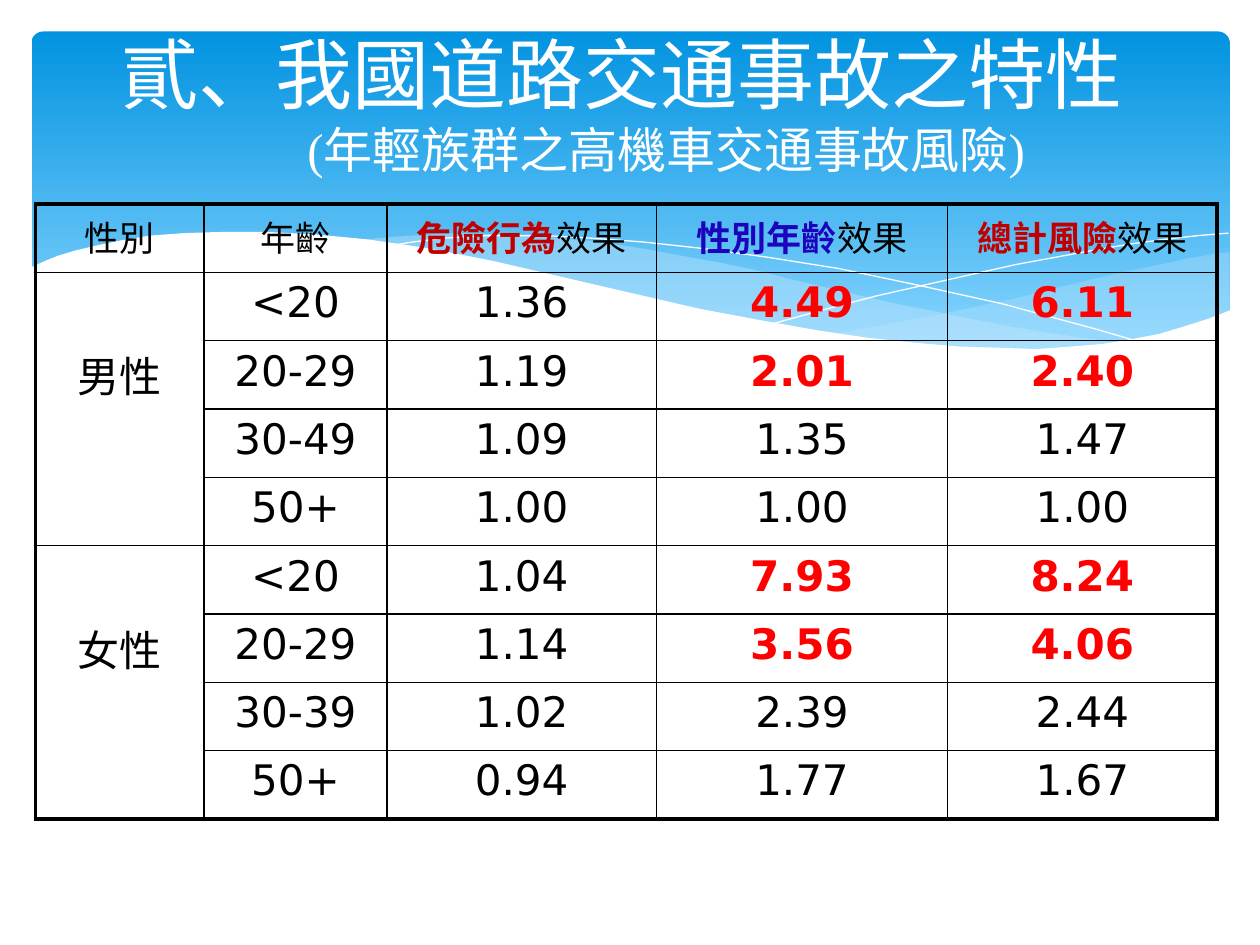
"""Build the slide on young riders' motorcycle accident risk."""
from lxml import etree
from pptx import Presentation
from pptx.dml.color import RGBColor
from pptx.enum.shapes import MSO_SHAPE as SHAPE
from pptx.enum.text import MSO_ANCHOR as ANCHOR, PP_ALIGN as ALIGN
from pptx.oxml.ns import qn
from pptx.util import Pt

BLACK = RGBColor(0x00, 0x00, 0x00)
WHITE = RGBColor(0xFF, 0xFF, 0xFF)
RED = RGBColor(0xFF, 0x00, 0x00)
DARK_RED = RGBColor(0xC0, 0x00, 0x00)
INDIGO = RGBColor(0x1E, 0x03, 0xBD)
SKY = RGBColor(0x02, 0x93, 0xE0)
PALE_SKY = RGBColor(0x83, 0xD3, 0xFE)
MIST = RGBColor(0xC6, 0xE7, 0xFC)
CJK = "Noto Sans CJK SC"
SANS = "DejaVu Sans"


def add_run(p, text, size, font=SANS, color=BLACK, bold=False):
    p.alignment = ALIGN.CENTER
    r = p.add_run()
    r.text = text
    r.font.size, r.font.name, r.font.bold = Pt(size), font, bold
    r.font.color.rgb = color
    etree.SubElement(r.font._element, qn("a:ea"), typeface=CJK)


def set_border(cell, side, width):
    ln = etree.SubElement(cell._tc.get_or_add_tcPr(), qn(f"a:ln{side}"), w=str(Pt(width)))
    fill = etree.SubElement(ln, qn("a:solidFill"))
    etree.SubElement(fill, qn("a:srgbClr"), val=str(BLACK))


prs = Presentation()
prs.slide_width, prs.slide_height = Pt(720), Pt(540)
s = prs.slides.add_slide(prs.slide_layouts[6])

sp = s.shapes.add_shape(SHAPE.ROUNDED_RECTANGLE, Pt(18), Pt(18), Pt(684.7), Pt(194.4))
sp.adjustments[0] = 0.034
sp.shadow.inherit = False
sp.line.fill.background()
sp.fill.gradient()
sp.fill.gradient_angle = 270
for stop, color, position in zip(sp.fill.gradient_stops, (SKY, PALE_SKY), (0, 0.9)):
    stop.color.rgb, stop.position = color, position

right_swell = [
    (975, 200), (948, 204), (921, 210), (891, 216), (861, 223), (805, 237), (753, 248),
    (706, 257), (661, 265), (691, 269), (719, 272), (745, 275), (769, 277), (803, 278),
    (835, 277), (863, 275), (889, 272), (913, 267), (935, 262), (949, 257), (963, 252),
    (976, 247), (976, 200)]
middle_swell = [
    (893, 273), (866, 269), (837, 265), (807, 260), (775, 254), (741, 247), (706, 240),
    (668, 231), (629, 222), (598, 214), (569, 208), (541, 203), (514, 198), (489, 194),
    (465, 191), (442, 189), (420, 187), (399, 186), (361, 185), (328, 187), (299, 189),
    (286, 191), (323, 196), (362, 203), (404, 211), (449, 222), (491, 232), (530, 240),
    (566, 248), (601, 255), (634, 261), (665, 266), (695, 270), (722, 274), (748, 276),
    (773, 277), (796, 278), (838, 278), (867, 276)]
falling_line = [
    (309, 195), (328, 192), (353, 189), (387, 187), (433, 187), (469, 189), (510, 192),
    (556, 197), (608, 204), (665, 213), (727, 226), (795, 241), (869, 261), (907, 272)]
rising_line = [
    (613, 257), (653, 246), (695, 235), (748, 223), (806, 210), (866, 199), (895, 194),
    (924, 190), (951, 187), (975, 185)]
white_wave = [
    (977, 246), (959, 253), (940, 259), (920, 265), (899, 269), (875, 273), (850, 275),
    (823, 277), (793, 276), (761, 275), (726, 272), (688, 268), (648, 262), (603, 254),
    (555, 245), (503, 233), (447, 220), (391, 207), (340, 197), (292, 190), (250, 186),
    (211, 184), (177, 184), (146, 185), (119, 187), (95, 191), (76, 195), (59, 199),
    (46, 203), (36, 207), (23, 213), (23, 329), (977, 329)]

for points, color, alpha in [
        (right_swell, MIST, 29), (middle_swell, MIST, 40), (falling_line, None, 0),
        (rising_line, None, 0), (white_wave, WHITE, 100)]:
    fb = s.shapes.build_freeform(*points[0], scale=Pt(0.72))
    fb.add_line_segments(points[1:], close=color is not None)
    sp = fb.convert_to_shape()
    sp.shadow.inherit = False
    if color is None:
        sp.fill.background()
        sp.line.color.rgb = WHITE
        sp.line.width = Pt(0)
    else:
        sp.line.fill.background()
        sp.fill.solid()
        sp.fill.fore_color.rgb = color
        clr = sp._element.spPr.find(qn("a:solidFill"))[0]
        etree.SubElement(clr, qn("a:alpha"), val=str(alpha * 1000))

header = [
    [("性別", BLACK)], [("年齡", BLACK)],
    [("危險行為", DARK_RED), ("效果", BLACK)],
    [("性別年齡", INDIGO), ("效果", BLACK)],
    [("總計風險", DARK_RED), ("效果", BLACK)]]
body = [
    ("男性", "<20", "1.36", "4.49", "6.11"),
    ("", "20-29", "1.19", "2.01", "2.40"),
    ("", "30-49", "1.09", "1.35", "1.47"),
    ("", "50+", "1.00", "1.00", "1.00"),
    ("女性", "<20", "1.04", "7.93", "8.24"),
    ("", "20-29", "1.14", "3.56", "4.06"),
    ("", "30-39", "1.02", "2.39", "2.44"),
    ("", "50+", "0.94", "1.77", "1.67")]
widths = [96.5, 104.4, 154.1, 166.3, 154.1]
rows, cols = len(body) + 1, len(widths)

table = s.shapes.add_table(
    rows, cols, Pt(20.16), Pt(116.64), Pt(sum(widths)), Pt(39.04 * rows)).table
table.first_row = table.horz_banding = False
for column, width in zip(table.columns, widths):
    column.width = Pt(width)
for row in table.rows:
    row.height = Pt(39.04)
for top in (1, 5):
    table.cell(top, 0).merge(table.cell(top + 3, 0))

for i in range(rows):
    for j in range(cols):
        cell = table.cell(i, j)
        bottom = i + (cell.span_height if cell.is_merge_origin else 1)
        for side, outer in (("L", j == 0), ("R", j == cols - 1),
                            ("T", i == 0), ("B", bottom == rows)):
            set_border(cell, side, 2.25 if outer else 1)
        cell.fill.background()
        p = cell.text_frame.paragraphs[0]
        if i == 0:
            for text, color in header[j]:
                add_run(p, text, 20, color=color, bold=color != BLACK)
        elif body[i - 1][j]:
            high = j > 2 and body[i - 1][1] in ("<20", "20-29")
            add_run(p, body[i - 1][j], 24, color=RED if high else BLACK, bold=high)
        if cell.is_merge_origin:
            cell.vertical_anchor = ANCHOR.MIDDLE
            cell.margin_bottom = Pt(43)

tf = s.shapes.add_textbox(Pt(0), Pt(2), Pt(711.4), Pt(113)).text_frame
tf.word_wrap = True
tf.vertical_anchor = ANCHOR.MIDDLE
add_run(tf.paragraphs[0], "貳、我國道路交通事故之特性", 44, font=CJK, color=WHITE)
p = tf.add_paragraph()
p._p.get_or_add_pPr().set("marL", str(Pt(50)))
for text, font in (("(", "Times New Roman"), ("年輕族群之高機車交通事故風險", CJK),
                   (")", "Times New Roman")):
    add_run(p, text, 28, font=font, color=WHITE)

prs.save("out.pptx")
